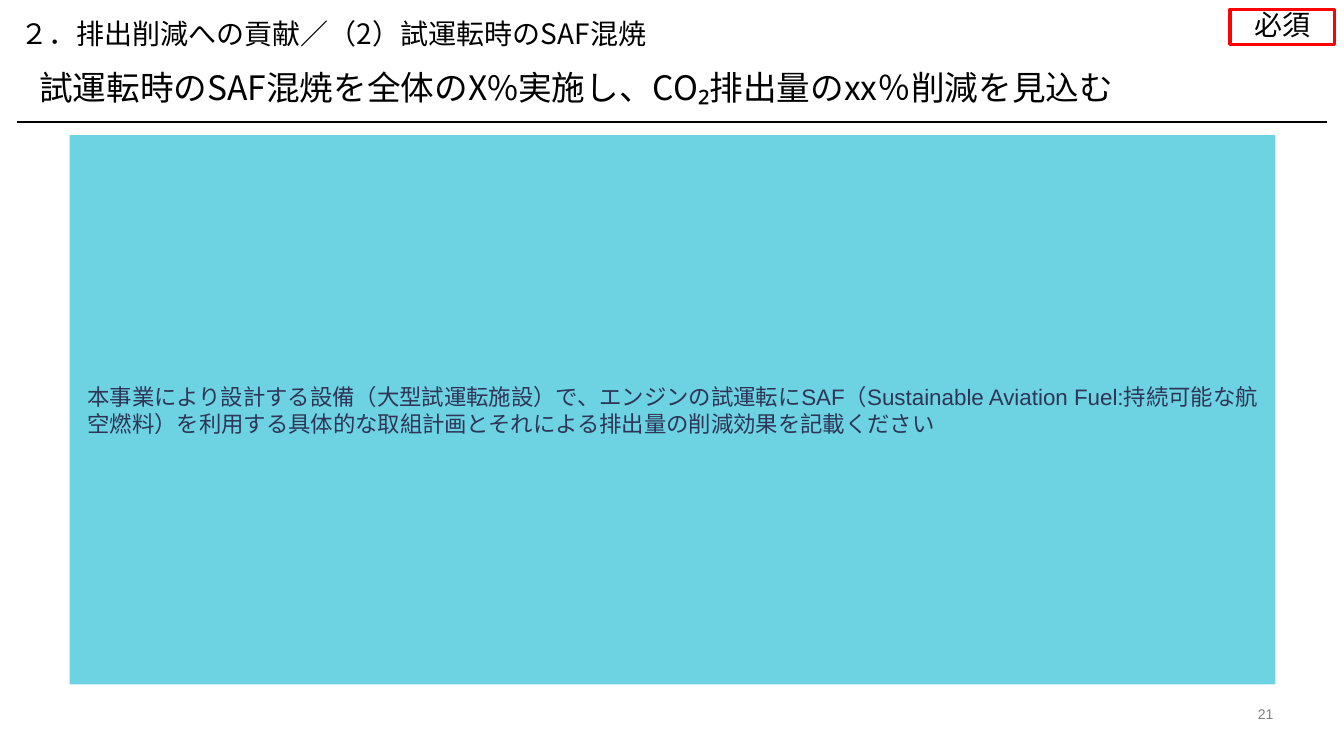
from lxml import etree
from pptx import Presentation
from pptx.dml.color import RGBColor
from pptx.enum.shapes import MSO_CONNECTOR, MSO_SHAPE
from pptx.enum.text import MSO_ANCHOR, MSO_AUTO_SIZE, PP_ALIGN
from pptx.oxml.ns import qn
from pptx.util import Inches, Pt

COLORS = {
    "text": "000000",
    "panel": "30C1D7",
    "panel_text": "2E3558",
    "required": "FF0000",
    "page_number": "808080",
}
JAPANESE_FONT = "Noto Sans CJK JP"
TITLE_ONLY = 5


def rgb(name):
    return RGBColor.from_string(COLORS[name])


def place(shape, left, top, width, height):
    shape.left, shape.top = Inches(left), Inches(top)
    shape.width, shape.height = Inches(width), Inches(height)


def write(shape, text, size, color="text", font=JAPANESE_FONT, align=PP_ALIGN.LEFT,
          anchor=MSO_ANCHOR.TOP, line_spacing=0.9, margin=0.0):
    """Fill a shape with one paragraph, with a Japanese font for East Asian text."""
    frame = shape.text_frame
    frame.word_wrap = True
    frame.auto_size = MSO_AUTO_SIZE.NONE
    frame.vertical_anchor = anchor
    frame.margin_left = frame.margin_right = Inches(margin)
    frame.margin_top = frame.margin_bottom = Inches(margin / 2)
    frame.text = text
    paragraph = frame.paragraphs[0]
    paragraph.alignment = align
    paragraph.line_spacing = line_spacing
    paragraph.font.size = Pt(size)
    paragraph.font.name = font
    paragraph.font.color.rgb = rgb(color)
    properties = paragraph._p.get_or_add_pPr()
    latin = properties.find(qn("a:defRPr")).find(qn("a:latin"))
    east_asian = etree.Element(qn("a:ea"), typeface=JAPANESE_FONT)
    latin.addnext(east_asian)
    return properties


def add_label(slide, box, text, size, **style):
    label = slide.shapes.add_textbox(*map(Inches, box))
    write(label, text, size, **style)


def add_rectangle(slide, box):
    rectangle = slide.shapes.add_shape(MSO_SHAPE.RECTANGLE, *map(Inches, box))
    rectangle.shadow.inherit = False
    return rectangle


def add_rule(slide, left, right, top):
    rule = slide.shapes.add_connector(
        MSO_CONNECTOR.STRAIGHT, Inches(left), Inches(top), Inches(right), Inches(top))
    rule.line.color.rgb = rgb("text")
    rule.line.width = Pt(1)
    etree.SubElement(rule._element.spPr, qn("a:effectLst"))


def add_required_badge(slide, box, text):
    badge = add_rectangle(slide, box)
    badge.fill.background()
    badge.line.color.rgb = rgb("required")
    badge.line.width = Pt(2.25)
    write(badge, text, 20, align=PP_ALIGN.CENTER, anchor=MSO_ANCHOR.MIDDLE)


def add_panel(slide, box, text):
    """Add the translucent instruction panel."""
    panel = add_rectangle(slide, box)
    panel.fill.solid()
    panel.fill.fore_color.rgb = rgb("panel")
    color = panel._element.spPr.find(qn("a:solidFill"))[0]
    etree.SubElement(color, qn("a:alpha"), val="70000")
    panel.line.fill.background()
    properties = write(panel, text, 16, color="panel_text", font="Arial",
                       anchor=MSO_ANCHOR.MIDDLE, line_spacing=1.0, margin=0.1)
    properties.set("marL", str(Inches(0.08)))
    properties.set("indent", "0")


def main():
    presentation = Presentation()
    presentation.slide_width = Inches(13.33)
    presentation.slide_height = Inches(7.5)
    slide = presentation.slides.add_slide(presentation.slide_layouts[TITLE_ONLY])

    add_label(slide, (0.2, 0.2, 11.96, 0.3),
              "２．排出削減への貢献／（2）試運転時のSAF混焼", 20)
    title = slide.shapes.title
    place(title, 0.39, 0.71, 12.3, 0.36)
    write(title, "試運転時のSAF混焼を全体のX%実施し、CO₂排出量のxx％削減を見込む", 24)
    add_rule(slide, 0.17, 13.16, 1.21)
    add_required_badge(slide, (12.2, 0.09, 1.04, 0.35), "必須")
    add_panel(slide, (0.69, 1.34, 11.96, 5.45),
              "本事業により設計する設備（大型試運転施設）で、エンジンの試運転にSAF"
              "（Sustainable Aviation Fuel:持続可能な航空燃料）を利用する具体的な"
              "取組計画とそれによる排出量の削減効果を記載ください")
    add_label(slide, (12.21, 7, 0.42, 0.17), "21", 10, color="page_number",
              font="Arial", align=PP_ALIGN.RIGHT, anchor=MSO_ANCHOR.BOTTOM,
              line_spacing=1.0)
    presentation.save("out.pptx")


if __name__ == "__main__":
    main()
